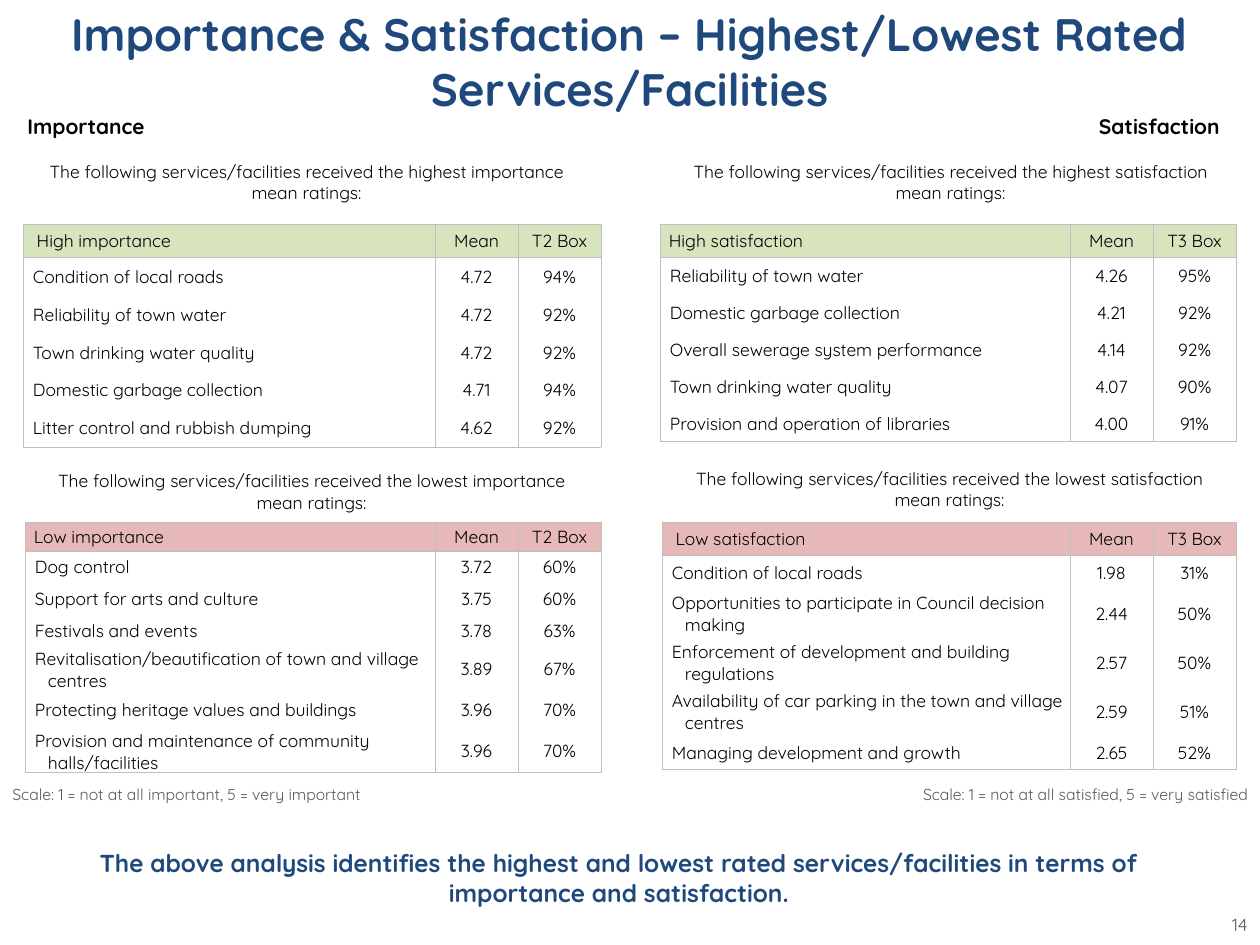
from dataclasses import dataclass
from typing import Any

from lxml import etree
from pptx import Presentation
from pptx.dml.color import RGBColor
from pptx.enum.text import MSO_ANCHOR, PP_ALIGN
from pptx.oxml.ns import qn
from pptx.util import Pt

LEFT, CENTER, RIGHT = PP_ALIGN.LEFT, PP_ALIGN.CENTER, PP_ALIGN.RIGHT
TOP, MIDDLE = MSO_ANCHOR.TOP, MSO_ANCHOR.MIDDLE

NAVY, BLACK, GREY, RULE = "1F497D", "000000", "595959", "BFBFBF"
GREEN, PINK = "D7E4BD", "E6B9B8"
VALUE_WIDTH = 83
HANGING = 13


def px(length):
    return round(length * 914400 / 126)


def color(code):
    return RGBColor.from_string(code)


@dataclass
class SlideBuilder:
    slide: Any
    font: str = "Quicksand"

    def style(self, paragraph, size, ink, bold=False, align=LEFT, spacing=None):
        paragraph.alignment = align
        if spacing:
            paragraph.line_spacing = spacing
        paragraph.font.name = self.font
        paragraph.font.size = Pt(size)
        paragraph.font.bold = bold
        paragraph.font.color.rgb = color(ink)

    def text(self, box, words, size, ink=BLACK, bold=False, align=CENTER,
             anchor=TOP, spacing=None):
        frame = self.slide.shapes.add_textbox(*map(px, box)).text_frame
        frame.word_wrap = True
        frame.vertical_anchor = anchor
        frame.text = words
        self.style(frame.paragraphs[0], size, ink, bold, align, spacing)

    def borders(self, cell, ruled_sides):
        properties = cell._tc.get_or_add_tcPr()
        for side in "LRTB":
            line = etree.SubElement(properties, qn("a:ln" + side), w=str(Pt(0.5)))
            if side in ruled_sides:
                fill = etree.SubElement(line, qn("a:solidFill"))
                etree.SubElement(fill, qn("a:srgbClr"), val=RULE)
            else:
                etree.SubElement(line, qn("a:noFill"))

    def cell(self, cell, words, is_header, is_label, ruled_sides, fill):
        self.borders(cell, ruled_sides)
        if is_header:
            cell.fill.solid()
            cell.fill.fore_color.rgb = color(fill)
            margins = (9, 0, 9, 0)
        else:
            cell.fill.background()
            margins = (10 if is_label else 1, 1, 1, 0)
        (cell.margin_left, cell.margin_top,
         cell.margin_right, cell.margin_bottom) = map(px, margins)
        cell.vertical_anchor = MIDDLE
        cell.text = words
        paragraph = cell.text_frame.paragraphs[0]
        if is_label and not is_header:
            indents = paragraph._p.get_or_add_pPr()
            indents.set("marL", str(px(HANGING)))
            indents.set("indent", str(-px(HANGING)))
        self.style(paragraph, 10, BLACK, align=LEFT if is_label else CENTER,
                   spacing=1.07 if is_header else None)

    def ratings(self, left, top, right, heights, fill, rows):
        widths = (right - left - 2 * VALUE_WIDTH, VALUE_WIDTH, VALUE_WIDTH)
        table = self.slide.shapes.add_table(
            len(rows), len(widths), px(left), px(top),
            px(right - left), px(sum(heights))).table
        table.first_row = table.horz_banding = False
        for column, width in zip(table.columns, widths):
            column.width = px(width)
        for r, (height, values) in enumerate(zip(heights, rows)):
            table.rows[r].height = px(height)
            ruled_sides = "LR" + ("T" if r < 2 else "")
            if r in (0, len(rows) - 1):
                ruled_sides += "B"
            for c, words in enumerate(values):
                self.cell(table.cell(r, c), words, r == 0, c == 0,
                          ruled_sides, fill)


HIGH_IMPORTANCE = [
    (" High importance", "Mean", "T2 Box"),
    ("Condition of local roads", "4.72", "94%"),
    ("Reliability of town water", "4.72", "92%"),
    ("Town drinking water quality", "4.72", "92%"),
    ("Domestic garbage collection", "4.71", "94%"),
    ("Litter control and rubbish dumping", "4.62", "92%"),
]
LOW_IMPORTANCE = [
    ("Low importance", "Mean", "T2 Box"),
    ("Dog control", "3.72", "60%"),
    ("Support for arts and culture", "3.75", "60%"),
    ("Festivals and events", "3.78", "63%"),
    ("Revitalisation/beautification of town and village centres", "3.89", "67%"),
    ("Protecting heritage values and buildings", "3.96", "70%"),
    ("Provision and maintenance of community halls/facilities", "3.96", "70%"),
]
HIGH_SATISFACTION = [
    ("High satisfaction", "Mean", "T3 Box"),
    ("Reliability of town water", "4.26", "95%"),
    ("Domestic garbage collection", "4.21", "92%"),
    ("Overall sewerage system performance", "4.14", "92%"),
    ("Town drinking water quality", "4.07", "90%"),
    ("Provision and operation of libraries", "4.00", "91%"),
]
LOW_SATISFACTION = [
    (" Low satisfaction", "Mean", "T3 Box"),
    ("Condition of local roads", "1.98", "31%"),
    ("Opportunities to participate in Council decision making", "2.44", "50%"),
    ("Enforcement of development and building regulations", "2.57", "50%"),
    ("Availability of car parking in the town and village centres", "2.59", "51%"),
    ("Managing development and growth", "2.65", "52%"),
]


def main():
    deck = Presentation()
    deck.slide_width, deck.slide_height = px(1260), px(945)
    builder = SlideBuilder(deck.slides.add_slide(deck.slide_layouts[6]))

    builder.text((1206, 908, 54, 34), "14", 10, GREY, align=RIGHT)
    builder.text((0, 0, 1260, 69),
                 "Importance & Satisfaction – Highest/Lowest Rated Services/Facilities",
                 26, NAVY, bold=True)
    builder.text((44, 810, 1150, 135),
                 "The above analysis identifies the highest and lowest rated "
                 "services/facilities in terms of importance and satisfaction.",
                 14, NAVY, bold=True, anchor=MIDDLE)

    builder.text((15, 106, 270, 38), "Importance", 12, bold=True, align=LEFT,
                 spacing=1.07)
    builder.text((968, 106, 270, 38), "Satisfaction ", 12, bold=True, align=RIGHT,
                 spacing=1.07)

    intros = [
        ((13, 155, 587, 55), "highest importance", None),
        ((35, 462, 553, 57), "lowest importance", 1.07),
        ((660, 155, 581, 55), "highest satisfaction", None),
        ((679, 462, 541, 55), "lowest satisfaction", None),
    ]
    for box, rating, spacing in intros:
        builder.text(box, f"The following services/facilities received the {rating} "
                          "mean ratings:", 10, spacing=spacing)

    builder.text((0, 779, 401, 32),
                 "Scale: 1 = not at all important, 5 = very important",
                 9, GREY, align=LEFT)
    builder.text((888, 779, 372, 32),
                 "Scale: 1 = not at all satisfied, 5 = very satisfied",
                 9, GREY, align=RIGHT)

    builder.ratings(23, 224, 601, [33] + [38] * 5, GREEN, HIGH_IMPORTANCE)
    builder.ratings(25, 522, 601, [29, 32, 32, 32, 44, 38, 44], PINK, LOW_IMPORTANCE)
    builder.ratings(660, 224, 1236, [33] + [37] * 5, GREEN, HIGH_SATISFACTION)
    builder.ratings(662, 522, 1236, [33, 34, 49, 49, 49, 34], PINK, LOW_SATISFACTION)

    deck.save("out.pptx")


if __name__ == "__main__":
    main()
